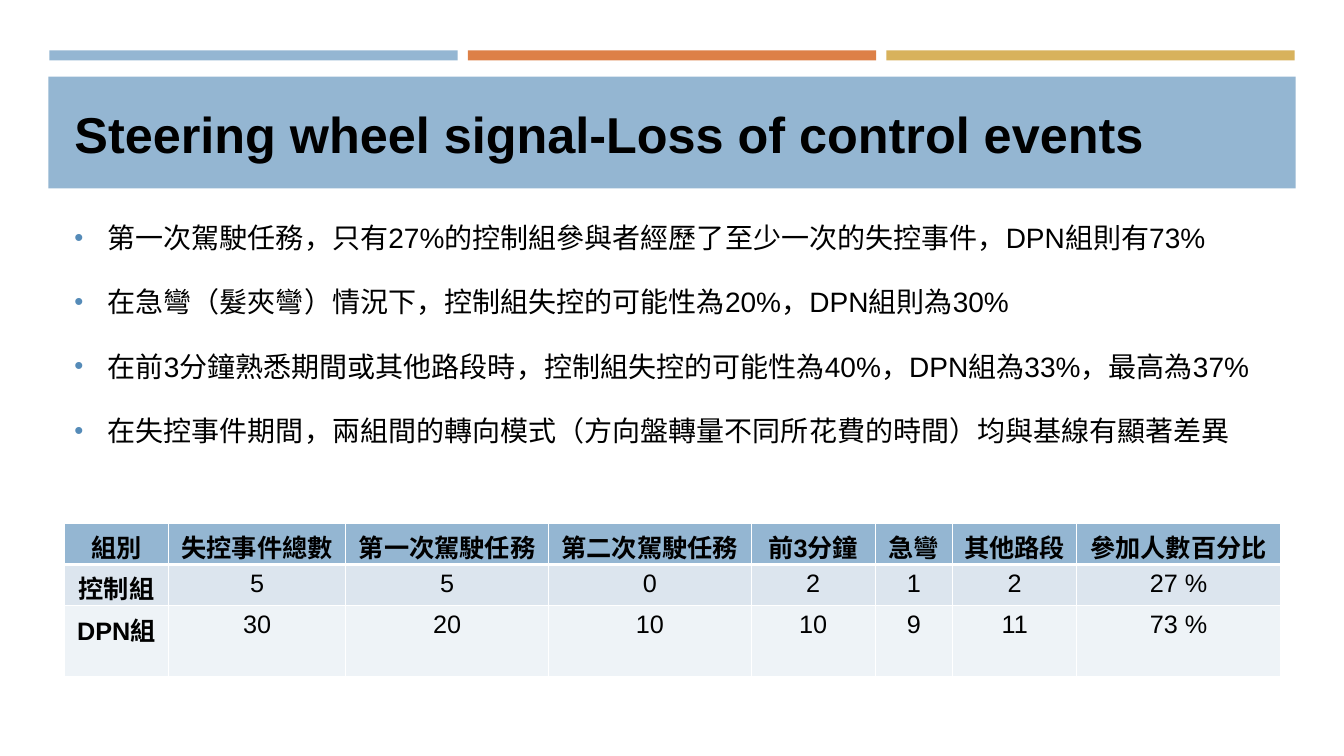
from dataclasses import dataclass

from lxml.etree import SubElement
from pptx import Presentation
from pptx.dml.color import RGBColor
from pptx.enum.shapes import MSO_SHAPE
from pptx.enum.text import MSO_ANCHOR, PP_ALIGN
from pptx.oxml import parse_xml
from pptx.oxml.ns import nsdecls, qn
from pptx.util import Inches, Pt


@dataclass(frozen=True)
class Theme:
    """Colours, font and type sizes of the slide."""
    font: str = "Arial"
    ink: str = "000000"
    white: str = "FFFFFF"
    blue: str = "94B6D2"
    orange: str = "DD8047"
    gold: str = "D8B25C"
    bullet: str = "558BB8"
    row_fills: tuple = ("94B6D2", "DCE5EE", "EEF3F7")
    title_size: int = 36
    body_size: int = 20
    table_size: int = 18


THEME = Theme()
TITLE = "Steering wheel signal-Loss of control events"
FINDINGS = [
    "第一次駕駛任務，只有27%的控制組參與者經歷了至少一次的失控事件，DPN組則有73%",
    "在急彎（髮夾彎）情況下，控制組失控的可能性為20%，DPN組則為30%",
    "在前3分鐘熟悉期間或其他路段時，控制組失控的可能性為40%，DPN組為33%，最高為37%",
    "在失控事件期間，兩組間的轉向模式（方向盤轉量不同所花費的時間）均與基線有顯著差異",
]
EVENTS = [
    ["組別", "失控事件總數", "第一次駕駛任務", "第二次駕駛任務", "前3分鐘", "急彎", "其他路段", "參加人數百分比"],
    ["控制組", "5", "5", "0", "2", "1", "2", "27 %"],
    ["DPN組", "30", "20", "10", "10", "9", "11", "73 %"],
]
COLUMN_WIDTHS = [1.03, 1.76, 2.01, 2.01, 1.23, 0.77, 1.23, 2.02]
ROW_HEIGHT = 0.41


def write_text(para, text, size, bold=False, align=PP_ALIGN.LEFT):
    """Write one formatted span into a paragraph."""
    para.alignment = align
    span = para.add_run()
    span.text = text
    span.font.name = THEME.font
    span.font.size = Pt(size)
    span.font.bold = bold
    span.font.color.rgb = RGBColor.from_string(THEME.ink)


def add_block(page, box, color):
    """Add a plain filled rectangle."""
    block = page.shapes.add_shape(MSO_SHAPE.RECTANGLE, *map(Inches, box))
    block.shadow.inherit = False
    block.fill.solid()
    block.fill.fore_color.rgb = RGBColor.from_string(color)
    block.line.fill.background()


def add_text_frame(page, box, anchor):
    """Add a wrapping text box and return its frame."""
    frame = page.shapes.add_textbox(*map(Inches, box)).text_frame
    frame.word_wrap = True
    frame.vertical_anchor = anchor
    return frame


def add_stripes(page, box):
    """Add three equal colour stripes across the box."""
    left, top, width, height = box
    gap = 0.1
    stripe = (width - 2 * gap) / 3
    for index, color in enumerate((THEME.blue, THEME.orange, THEME.gold)):
        add_block(page, (left + index * (stripe + gap), top, stripe, height), color)


def add_title(page, box):
    """Add the title on its colour band."""
    left, top, width, height = box
    add_block(page, box, THEME.blue)
    frame = add_text_frame(page, (left + 0.16, top + 0.01, width - 0.31, height), MSO_ANCHOR.MIDDLE)
    write_text(frame.paragraphs[0], TITLE, THEME.title_size, bold=True)


def add_bullet(para):
    """Give a paragraph a hanging coloured bullet."""
    properties = para._p.get_or_add_pPr()
    properties.set("marL", str(Inches(0.33)))
    properties.set("indent", str(-Inches(0.33)))
    color = SubElement(properties, qn("a:buClr"))
    SubElement(color, qn("a:srgbClr"), val=THEME.bullet)
    SubElement(properties, qn("a:buSzPct"), val="92000")
    SubElement(properties, qn("a:buFont"), typeface=THEME.font)
    SubElement(properties, qn("a:buChar"), char="•")


def add_findings(page, box):
    """Add the bulleted findings."""
    frame = add_text_frame(page, box, MSO_ANCHOR.TOP)
    for index, finding in enumerate(FINDINGS):
        para = frame.add_paragraph() if index else frame.paragraphs[0]
        write_text(para, finding, THEME.body_size, align=PP_ALIGN.JUSTIFY)
        para.line_spacing = 1.5
        para.space_before = Pt(4)
        para.space_after = Pt(6)
        add_bullet(para)


def add_borders(cell, bottom):
    """Draw white cell borders with the given bottom width."""
    properties = cell._tc.get_or_add_tcPr()
    for index, (side, points) in enumerate((("L", 1), ("R", 1), ("T", 1), ("B", bottom))):
        border = parse_xml(
            f'<a:ln{side} {nsdecls("a")} w="{Pt(points)}"><a:solidFill>'
            f'<a:srgbClr val="{THEME.white}"/></a:solidFill></a:ln{side}>')
        properties.insert(index, border)


def add_event_table(page, box):
    """Add the table of loss of control events."""
    table = page.shapes.add_table(len(EVENTS), len(COLUMN_WIDTHS), *map(Inches, box)).table
    table.first_col = True
    for column, width in zip(table.columns, COLUMN_WIDTHS):
        column.width = Inches(width)
    for row_index, values in enumerate(EVENTS):
        table.rows[row_index].height = Inches(ROW_HEIGHT)
        for column_index, value in enumerate(values):
            cell = table.cell(row_index, column_index)
            cell.fill.solid()
            cell.fill.fore_color.rgb = RGBColor.from_string(THEME.row_fills[row_index])
            add_borders(cell, bottom=1 if row_index else 3)
            write_text(cell.text_frame.paragraphs[0], value, THEME.table_size,
                       bold=row_index == 0 or column_index == 0, align=PP_ALIGN.CENTER)


def main():
    """Build and save the deck."""
    deck = Presentation()
    deck.slide_width = Inches(13.33)
    deck.slide_height = Inches(7.5)
    page = deck.slides.add_slide(deck.slide_layouts[6])
    add_stripes(page, (0.49, 0.5, 12.35, 0.1))
    add_title(page, (0.48, 0.76, 12.37, 1.11))
    add_findings(page, (0.64, 1.97, 12.06, 4.43))
    add_event_table(page, (0.64, 5.19, sum(COLUMN_WIDTHS), ROW_HEIGHT * len(EVENTS)))
    deck.save("out.pptx")


if __name__ == "__main__":
    main()
